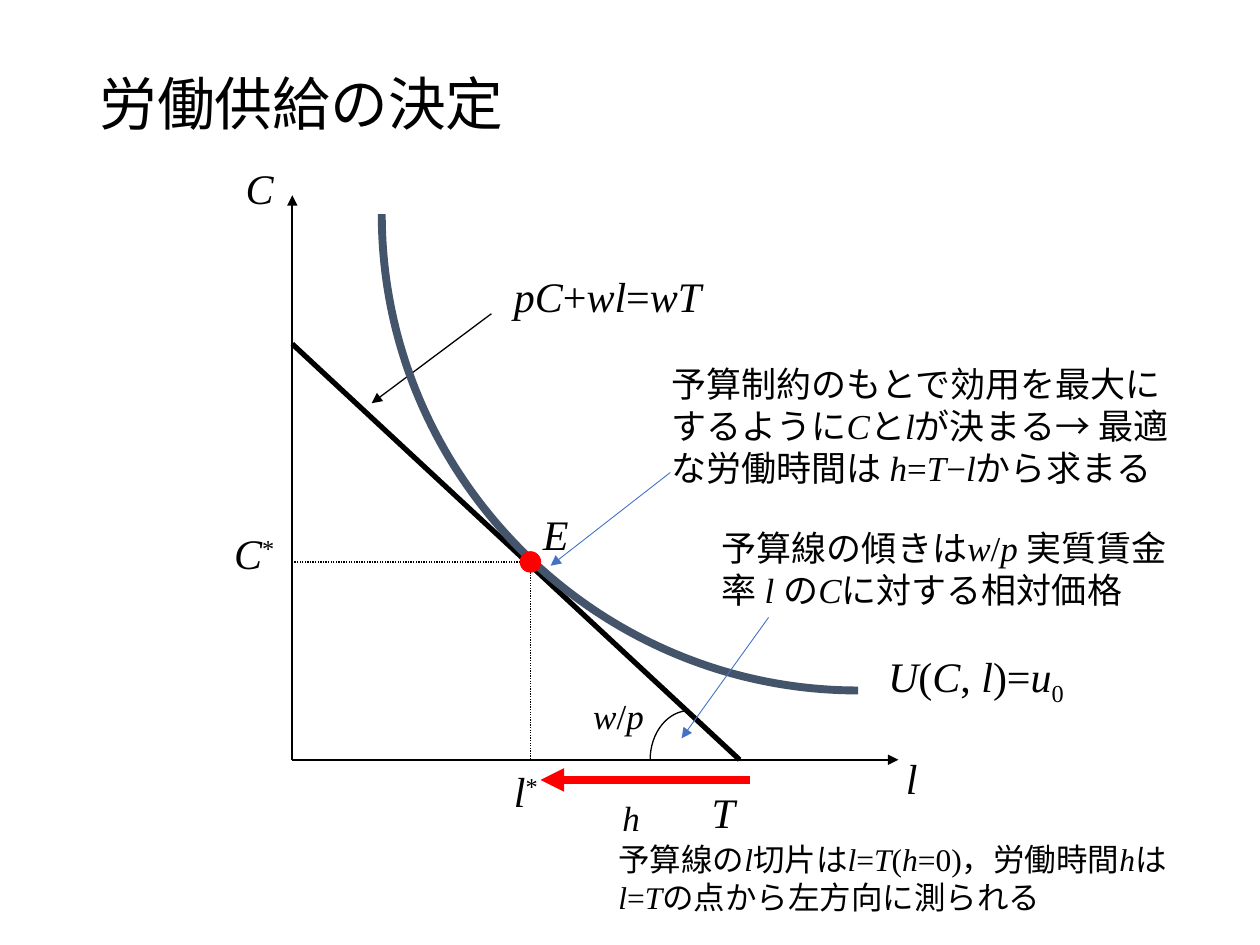
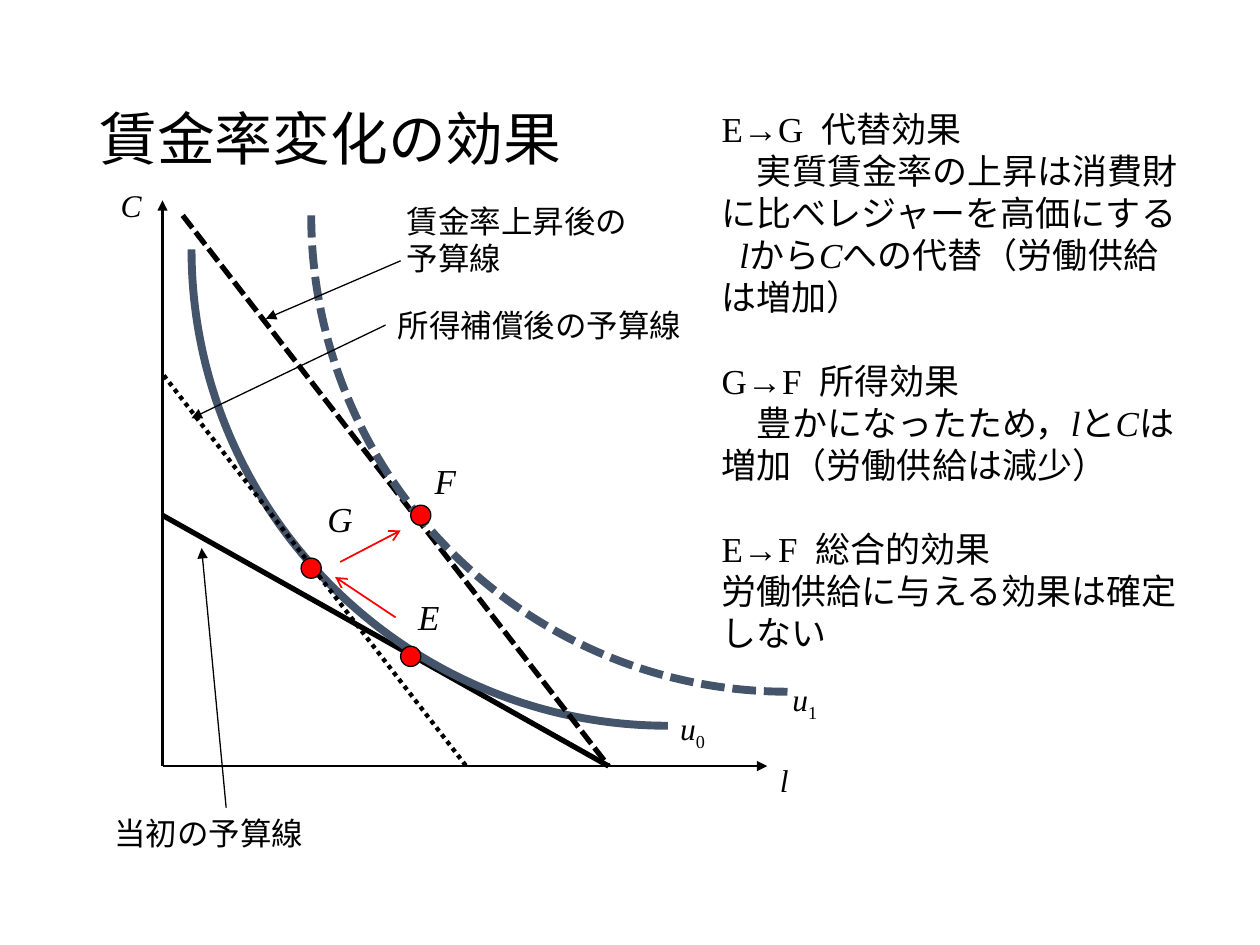
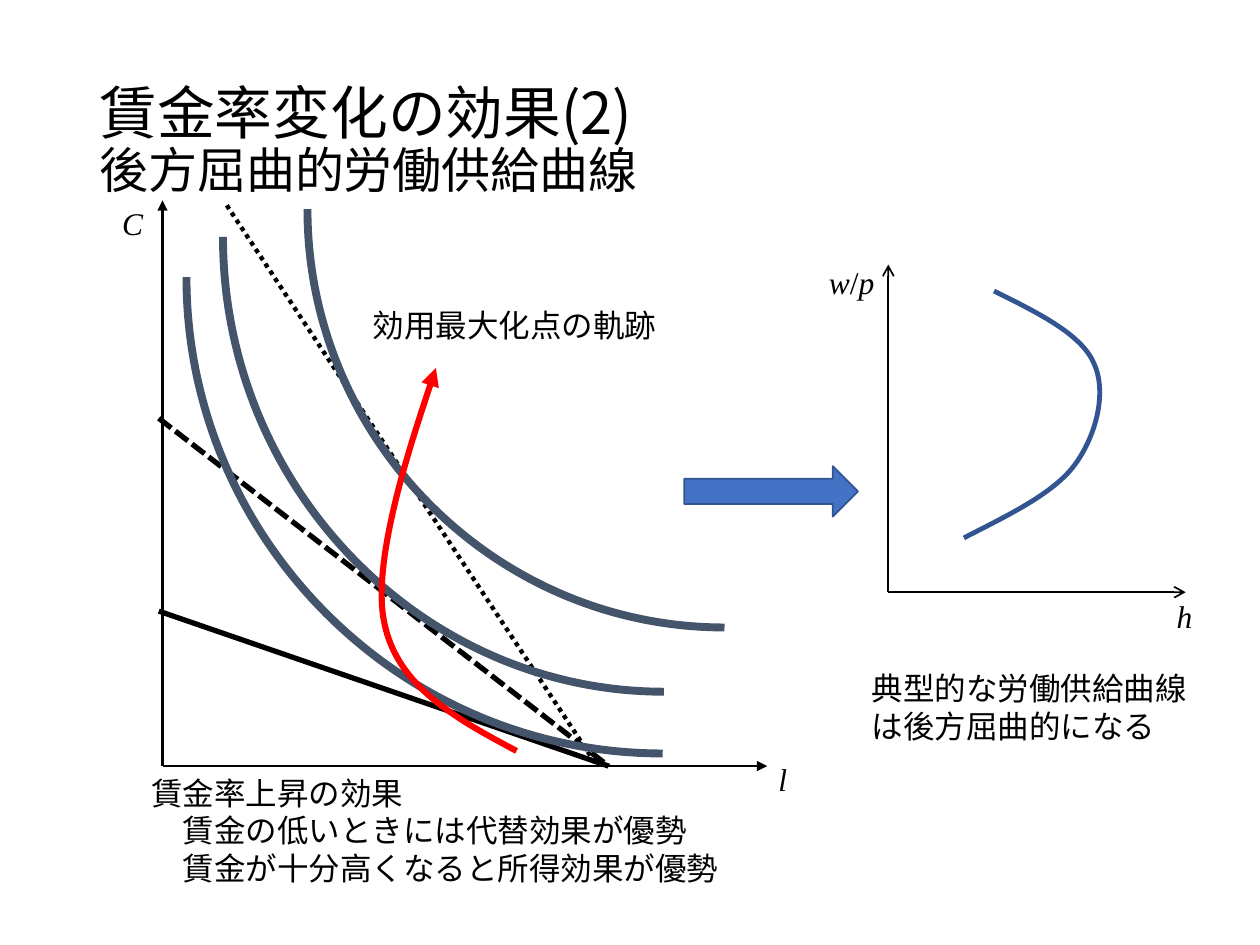
from dataclasses import dataclass

from lxml import etree
from pptx import Presentation
from pptx.dml.color import RGBColor
from pptx.enum.dml import MSO_LINE
from pptx.enum.shapes import MSO_CONNECTOR, MSO_SHAPE
from pptx.enum.text import MSO_ANCHOR
from pptx.oxml.ns import qn
from pptx.util import Inches, Pt

DASH = MSO_LINE.SQUARE_DOT
DOT = MSO_LINE.ROUND_DOT
STRAIGHT = MSO_CONNECTOR.STRAIGHT
OVAL = MSO_SHAPE.OVAL
ARROW = MSO_SHAPE.RIGHT_ARROW
MIDDLE = MSO_ANCHOR.MIDDLE
TOP_SIDE, LEFT_SIDE = 0, 1
SUPER, SUB = 30000, -25000
KAPPA = 0.55


@dataclass(frozen=True)
class Theme:
    """Colours, fonts and type sizes of the deck."""
    ink: str = "000000"
    red: str = "FF0000"
    slate: str = "44546A"
    blue: str = "4472C4"
    navy: str = "325491"
    latin: str = "Times New Roman"
    asian: str = "Noto Sans CJK JP"
    head: int = 33
    subhead: int = 28
    big: int = 24
    mid: int = 20
    small: int = 18


THEME = Theme()


def style_run(run, size, slant=False, face=THEME.latin):
    """Give a run its fonts, size and colour."""
    font = run.font
    font.size, font.italic, font.name = Pt(size), slant, face
    font.color.rgb = RGBColor.from_string(THEME.ink)
    east = etree.SubElement(run._r.get_or_add_rPr(), qn("a:ea"))
    east.set("typeface", THEME.asian)


def style_line(line, color, width, dash=None, tip=None):
    """Set the stroke of a line, with an optional arrowhead."""
    line.color.rgb = RGBColor.from_string(color)
    line.width = Pt(width)
    if dash:
        line.dash_style = dash
    if tip:
        end = etree.SubElement(line._get_or_add_ln(), qn("a:tailEnd"))
        end.set("type", tip)


def bend(shape):
    """Turn each three straight segments of a freeform into one cubic curve."""
    legs = list(shape._element.iter(qn("a:lnTo")))
    for i in range(0, len(legs), 3):
        cubic = etree.Element(qn("a:cubicBezTo"))
        legs[i].addprevious(cubic)
        for leg in legs[i:i + 3]:
            cubic.append(leg[0])
            leg.getparent().remove(leg)


class Pane:
    """A box on a slide that places its parts from its top left corner."""

    def __init__(self, slide, left, top, width, height):
        """Keep the slide and the box."""
        self.shapes = slide.shapes
        self.left, self.top = left, top
        self.width, self.height = width, height

    def spot(self, x, y):
        """Turn a place in the box into slide lengths."""
        return Inches(self.left + x), Inches(self.top + y)

    def text(self, words, x, y, w, h=0.5, size=THEME.big, script="", base=SUPER):
        """Add text in which underscores enclose italics."""
        box = self.shapes.add_textbox(*self.spot(x, y), Inches(w), Inches(h))
        frame = box.text_frame
        frame.word_wrap = True
        for i, row in enumerate(words.split("\n")):
            para = frame.add_paragraph() if i else frame.paragraphs[0]
            for j, part in enumerate(row.split("_")):
                if part:
                    run = para.add_run()
                    run.text = part
                    style_run(run, size, j % 2 == 1)
        if script:
            run = para.add_run()
            run.text = script
            style_run(run, size)
            run._r.get_or_add_rPr().set("baseline", str(base))
        return box

    def line(self, start, end, color=THEME.ink, width=0.75, dash=None, tip=None):
        """Add a straight line or arrow."""
        link = self.shapes.add_connector(STRAIGHT, *self.spot(*start), *self.spot(*end))
        style_line(link.line, color, width, dash, tip)
        etree.SubElement(link._element.spPr, qn("a:effectLst"))
        return link

    def axes(self, width=1.25, tip="triangle"):
        """Draw both axes along the left and bottom of the box."""
        for end in ((0, 0), (self.width, self.height)):
            self.line((0, self.height), end, width=width, tip=tip)

    def curve(self, points, color, width, dash=None, tip=None):
        """Draw joined cubic curves through the given points."""
        first, *rest = [self.spot(*p) for p in points]
        pen = self.shapes.build_freeform(*first)
        pen.add_line_segments(rest, close=False)
        shape = pen.convert_to_shape()
        bend(shape)
        shape.shadow.inherit = False
        shape.fill.background()
        style_line(shape.line, color, width, dash, tip)

    def bow(self, x, y, w, h, color=THEME.slate, width=4.5, dash=None):
        """Draw a quarter ellipse from its lower right end to its upright end."""
        points = [(x + w, y + h), (x + w - KAPPA * w, y + h), (x, y + KAPPA * h), (x, y)]
        self.curve(points, color, width, dash)

    def solid(self, kind, x, y, w, h, fill, edge, width=0.75):
        """Add a filled shape."""
        shape = self.shapes.add_shape(kind, *self.spot(x, y), Inches(w), Inches(h))
        shape.shadow.inherit = False
        shape.fill.solid()
        shape.fill.fore_color.rgb = RGBColor.from_string(fill)
        style_line(shape.line, edge, width)

    def dot(self, x, y, edge=THEME.ink):
        """Mark a point with a red dot."""
        self.solid(OVAL, x - 0.08, y - 0.08, 0.16, 0.16, THEME.red, edge)


def add_title(slide, words, width, height):
    """Add the slide title, with any second line smaller."""
    box = Pane(slide, 0.69, 0.4, width, height).text("", 0, 0, width, height)
    frame = box.text_frame
    frame.vertical_anchor = MIDDLE
    para = frame.paragraphs[0]
    para.text = words
    para.line_spacing = 0.9
    for run, size in zip(para.runs, (THEME.head, THEME.subhead)):
        style_run(run, size, face=THEME.asian)


def indent(para, length):
    """Shift the first line of a paragraph."""
    para._p.get_or_add_pPr().set("indent", str(Inches(length)))


def draw_choice(slide, box):
    """Draw the choice of work hours."""
    pane = Pane(slide, *box)
    base = pane.height
    best = (1.89, 2.91)
    pane.axes()
    pane.line((0, 1.18), (3.55, base), width=3)
    pane.line((1.58, 0.94), (0.63, 1.65), tip="triangle")
    pane.bow(2.84, base, 0.31, -0.39, THEME.ink, 0.75)
    pane.bow(0.71, 0.15, 3.78, 3.78)
    for foot in ((0, best[1]), (best[0], base)):
        pane.line(best, foot, dash=DOT)
    pane.dot(*best, THEME.red)
    pane.line((3.63, 4.64), (1.97, 4.64), THEME.red, 4.5, tip="triangle")
    for words, x, y, w in (
        ("_l_", 4.77, 4.37, 0.55),
        ("_C_", -0.47, -0.31, 0.55),
        ("_pC_+_wl_=_wT_", 1.66, 0.55, 1.89),
        ("_E_", 1.89, 2.44, 0.32),
        ("_T_", 3.23, 4.64, 0.39),
    ):
        pane.text(words, x, y, w)
    pane.text("_w_/_p_", 2.29, 3.91, 0.63, 0.43, THEME.mid)
    pane.text("_h_", 2.52, 4.72, 0.32, 0.43, THEME.mid)
    pane.text("_l_", 1.66, base, 0.55, script="*")
    pane.text("_C_", -0.56, 2.59, 0.71, script="*")
    rule = pane.text("_U_(_C_, _l_)=_u_", 4.63, 3.56, 1.63, script="0", base=SUB)
    rule.text_frame.word_wrap = False


def add_notes(slide, box):
    """Explain the best point, the slope and the intercept."""
    pane = Pane(slide, *box)
    pane.text("予算制約のもとで効用を最大にするように_C_と_l_が決まる→ 最適な労働時間は "
              "_h_=_T_−_l_から求まる", 0.42, 0, 4.28, 1.11, THEME.mid)
    pane.text("予算線の傾きは_w_/_p _実質賃金率 _l _の_C_に対する相対価格",
              0.82, 1.3, 3.88, 0.77, THEME.mid)
    pane.text("予算線の_l_切片は_l_=_T_(_h_=0)，労働時間_h_は_l_=_T_の点から左方向に測られる",
              0, 3.79, 4.88, 0.71, THEME.small)
    for start, end in (((0.51, 0.92), (-0.44, 1.66)), ((1.29, 2.07), (0.6, 3.03))):
        pane.line(start, end, THEME.blue, 0.5, tip="triangle")


def draw_shift(slide, box):
    """Draw how a wage rise moves the chosen point."""
    pane = Pane(slide, *box)
    base, small = pane.height, THEME.small
    first = pane.text("当初の予算線", -0.48, 4.82, 1.97, 0.4, small)
    paid = pane.text("所得補償後の予算線", 1.77, 0.79, 2.61, 0.4, small)
    pane.text("賃金率上昇後の予算線", 1.84, -0.04, 2.17, 0.71, small)
    pane.axes()
    pane.line((0, 2.5), (3.54, base), width=3)
    pane.bow(0.23, 0.39, 3.78, 3.78)
    pane.line((0.16, 0.12), (3.54, base), width=3, dash=DASH)
    pane.line((0.01, 1.39), (2.41, base), width=2.5, dash=DOT)
    pane.bow(1.18, 0.12, 3.78, 3.78, dash=DASH)
    pane.line((1.89, 0.48), (0.82, 0.94), tip="triangle")
    link = pane.line((0.51, 4.82), (0.31, 2.76), tip="triangle")
    link.begin_connect(first, TOP_SIDE)
    link = pane.line((1.77, 0.99), (0.23, 1.73), tip="triangle")
    link.begin_connect(paid, LEFT_SIDE)
    for name, spot, label in (
        ("E", (1.97, 3.62), (1.93, 3.09)),
        ("F", (2.05, 2.5), (2.06, 2.01)),
        ("G", (1.18, 2.92), (1.21, 2.31)),
    ):
        pane.dot(*spot)
        pane.text(f"_{name}_", *label, 0.32, 0.43, THEME.mid)
    for start, end in (((1.85, 3.31), (1.37, 2.99)), ((1.41, 2.87), (1.89, 2.62))):
        pane.line(start, end, THEME.red, 1, tip="arrow")
    for digit, x, y in (("0", 4.01, 3.99), ("1", 4.9, 3.76)):
        pane.text("_u_", x, y, 0.47, 0.4, small, digit, SUB)
    pane.text("_l_", 4.8, 4.4, 0.59, 0.42, small)
    pane.text("_C_", -0.43, -0.16, 0.41, 0.4, small)


def add_effects(slide, box):
    """List the three effects of a wage rise."""
    words = (
        "E→G  代替効果\n実質賃金率の上昇は消費財に比べレジャーを高価にする\n"
        "_l_から_C_への代替（労働供給は増加）\n"
        "G→F  所得効果\n豊かになったため，_l_と_C_は増加（労働供給は減少）\n"
        "E→F  総合的効果\n労働供給に与える効果は確定しない"
    )
    block = Pane(slide, *box).text(words, 0, 0, *box[2:], THEME.mid)
    paras = block.text_frame.paragraphs
    for i, length in ((1, 0.28), (2, 0.14), (4, 0.28)):
        indent(paras[i], length)
    for i in (3, 5):
        paras[i].space_before = Pt(24)


def draw_path(slide, box):
    """Draw the path of best points as the wage rises."""
    pane = Pane(slide, *box)
    base, small = pane.height, THEME.small
    pane.axes()
    pane.line((-0.03, 3.26), (3.54, base), width=3)
    pane.line((-0.03, 1.73), (3.54, base), width=3, dash=DASH)
    pane.line((0.51, 0.04), (3.45, base), width=2.5, dash=DOT)
    for arc in ((0.19, 0.61, 3.78, 3.78), (0.48, 0.29, 3.5, 3.61),
                (1.15, 0.07, 3.31, 3.32)):
        pane.bow(*arc)
    pane.curve([(2.81, 4.37), (2.34, 4.12), (1.86, 3.86), (1.76, 3.35),
                (1.65, 2.84), (2.17, 1.33), (2.17, 1.33)],
               THEME.red, 3.5, tip="triangle")
    pane.text("効用最大化点の軌跡", 1.57, 0.79, 2.53, 0.4, small)
    pane.text("_l_", 4.79, 4.39, 0.59, 0.42, small)
    pane.text("_C_", -0.42, -0.02, 0.41, 0.4, small)
    note = pane.text("賃金率上昇の効果\n賃金の低いときには代替効果が優勢\n"
                     "賃金が十分高くなると所得効果が優勢", -0.19, 4.5, 5.32, 1.01, small)
    for para in note.text_frame.paragraphs[1:]:
        indent(para, 0.25)


def draw_supply(slide, box):
    """Draw the supply curve that bends back."""
    pane = Pane(slide, *box)
    small = THEME.small
    pane.axes(1, "arrow")
    pane.curve([(0.6, 2.17), (0.95, 1.99), (1.31, 1.82), (1.48, 1.59), (1.65, 1.36),
                (1.74, 1.01), (1.63, 0.78), (1.53, 0.55), (1.18, 0.38), (0.84, 0.21)],
               THEME.navy, 2.75)
    pane.text("_h_", 2.19, 2.59, 0.47, 0.4, small)
    pane.text("_w_/_p_", -0.57, -0.06, 0.69, 0.4, small)
    pane.text("典型的な労働供給曲線は後方屈曲的になる", -0.23, 3.16, 2.76, 0.71, small)
    pane.solid(ARROW, -1.62, 1.6, 1.38, 0.4, THEME.blue, THEME.navy, 1)


def main():
    """Build and save the deck."""
    deck = Presentation()
    deck.slide_width, deck.slide_height = Inches(10), Inches(7.5)
    blank = deck.slide_layouts[6]
    graph = (1.29, 1.59, 4.8, 4.49)
    for title, size, parts in (
        ("労働供給の決定", (4.86, 0.9),
         ((draw_choice, (2.32, 1.55, 4.81, 4.48)), (add_notes, (4.81, 2.83, 4.88, 4.5)))),
        ("賃金率変化の効果", (8.62, 1.45),
         ((draw_shift, graph), (add_effects, (5.63, 0.8, 3.9, 4.78)))),
        ("賃金率変化の効果(2)\v後方屈曲的労働供給曲線", (7.46, 1.45),
         ((draw_path, graph), (draw_supply, (7.05, 2.1, 2.36, 2.6)))),
    ):
        slide = deck.slides.add_slide(blank)
        add_title(slide, title, *size)
        for draw, box in parts:
            draw(slide, box)
    deck.save("out.pptx")


if __name__ == "__main__":
    main()
